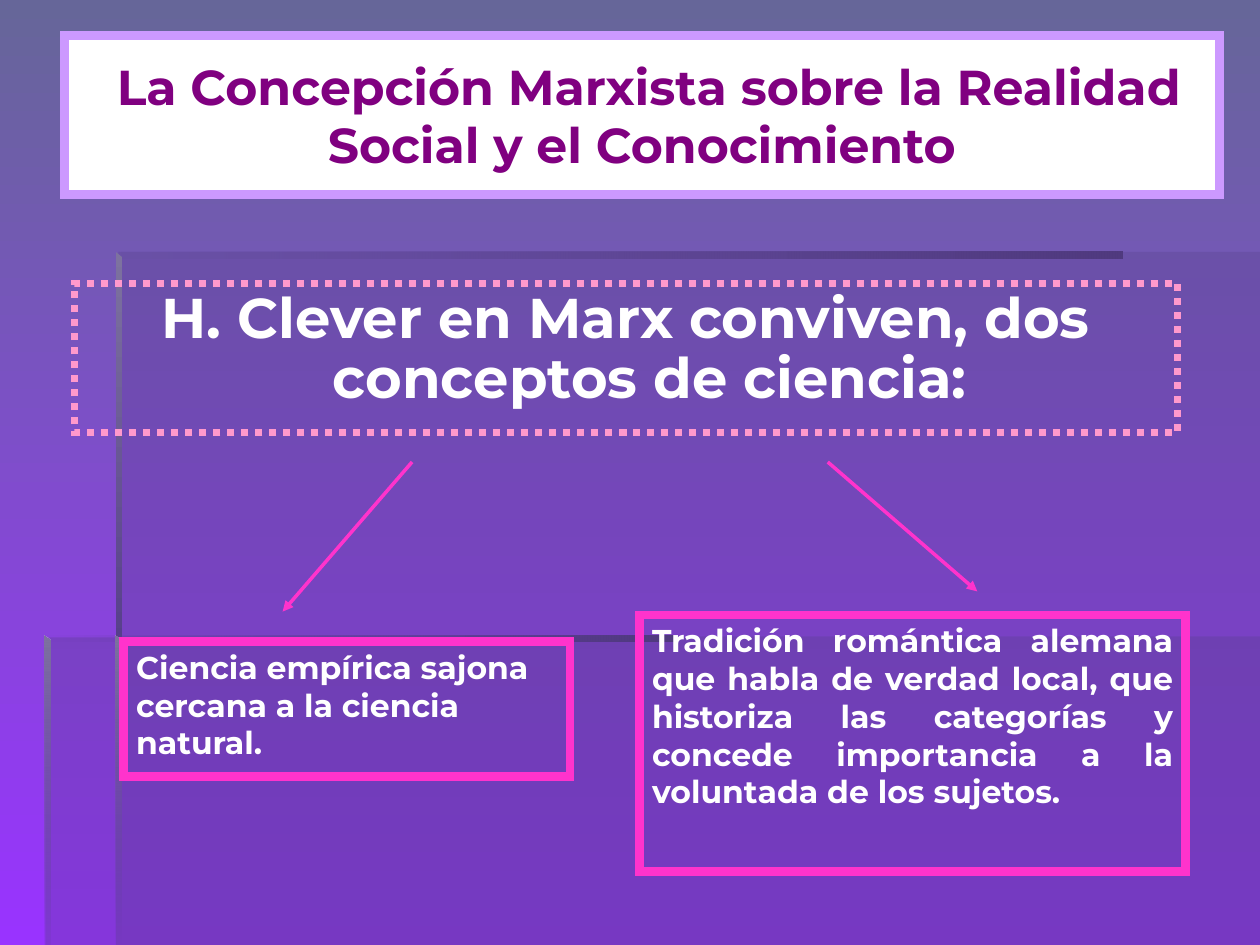
import pptx
import pptx.util
import pptx.dml.color
import pptx.enum.dml
import pptx.enum.shapes
import pptx.enum.text
import pptx.oxml
import pptx.oxml.ns
from lxml import etree

Pt = pptx.util.Pt
ALIGN = pptx.enum.text.PP_ALIGN
ANCHOR = pptx.enum.text.MSO_ANCHOR
WIDTH, HEIGHT = 720, 540
DOWN, RIGHT = 270, 0
PANEL, EDGE_LIGHT, EDGE_DARK = "573F8B", "7D729F", "503A7F"
PINK, WHITE = "FF33CC", "FFFFFF"


def color(hex_string):
    return pptx.dml.color.RGBColor.from_string(hex_string)


def add_child(parent, tag, **attributes):
    child = etree.SubElement(parent, pptx.oxml.ns.qn(tag))
    for name, value in attributes.items():
        child.set(name, str(value))
    return child


class SlideBuilder:
    """Holds the text style and the slide being built."""

    font_name = "Montserrat"

    def __init__(self, slide):
        self.slide = slide

    def gradient(self, fill, start, end, angle, opacities=(100, 100)):
        fill.gradient()
        fill.gradient_angle = angle
        for position, stop, hex_string, opacity in zip(
                (0, 1), fill.gradient_stops, (start, end), opacities):
            stop.position = position
            stop.color.rgb = color(hex_string)
        return opacities

    def set_opacity(self, shape, opacities):
        colors = shape.fill._xPr.iter(pptx.oxml.ns.qn("a:srgbClr"))
        for element, opacity in zip(list(colors), opacities):
            if opacity < 100:
                add_child(element, "a:alpha", val=opacity * 1000)

    def outline(self, points):
        (left, top), *others = points
        builder = self.slide.shapes.build_freeform(Pt(left), Pt(top), scale=1.0)
        builder.add_line_segments([(Pt(x), Pt(y)) for x, y in others], close=True)
        shape = builder.convert_to_shape()
        shape.shadow.inherit = False
        shape.line.fill.background()
        return shape

    def panel(self, points, opacity):
        shape = self.outline(points)
        shape.fill.solid()
        shape.fill.fore_color.rgb = color(PANEL)
        self.set_opacity(shape, [opacity])

    def edge(self, points, start, end, angle, opacities):
        shape = self.outline(points)
        self.gradient(shape.fill, start, end, angle)
        self.set_opacity(shape, opacities)

    def box(self, frame, text, size, line_color, line_width, text_color=WHITE,
            fill=None, align=ALIGN.LEFT, anchor=ANCHOR.TOP, dash=None):
        shape = self.slide.shapes.add_shape(
            pptx.enum.shapes.MSO_SHAPE.RECTANGLE, *map(Pt, frame))
        shape.shadow.inherit = False
        if fill:
            shape.fill.solid()
            shape.fill.fore_color.rgb = color(fill)
        else:
            shape.fill.background()
        shape.line.color.rgb = color(line_color)
        shape.line.width = Pt(line_width)
        if dash:
            shape.line.dash_style = dash
        add_child(shape.line._get_or_add_ln(), "a:miter", lim=800000)
        shape.text_frame.word_wrap = True
        shape.text_frame.vertical_anchor = anchor
        paragraph = shape.text_frame.paragraphs[0]
        paragraph.text = text
        paragraph.alignment = align
        paragraph.font.name = self.font_name
        paragraph.font.size = Pt(size)
        paragraph.font.bold = True
        paragraph.font.color.rgb = color(text_color)
        return paragraph

    def arrow(self, start, end):
        connector = self.slide.shapes.add_connector(
            pptx.enum.shapes.MSO_CONNECTOR.STRAIGHT, *map(Pt, start + end))
        connector.line.color.rgb = color(PINK)
        connector.line.width = Pt(2)
        add_child(connector.line._get_or_add_ln(), "a:tailEnd", type="triangle")
        add_child(connector._element.spPr, "a:effectLst")


def main():
    presentation = pptx.Presentation()
    presentation.slide_width, presentation.slide_height = Pt(WIDTH), Pt(HEIGHT)
    slide = presentation.slides.add_slide(presentation.slide_layouts[6])
    builder = SlideBuilder(slide)

    # Background with two overlapping translucent panels
    builder.gradient(slide.background.fill, "666699", "9933FF", DOWN)
    builder.panel([(66.2, 363.6), (66.2, HEIGHT), (WIDTH, HEIGHT), (WIDTH, 363.6)], 30)
    builder.panel([(67.7, 364.3), (26, 364.3), (26, HEIGHT), (WIDTH, HEIGHT),
                   (WIDTH, 144), (67.7, 144)], 30)

    # Bevelled panel edges: left, top, right, bottom
    for left, top, right, bottom in ((66.2, 144, 641.5, 147.6), (25.2, 363, 385.2, 366.6)):
        builder.edge([(left, top), (left, bottom), (right, bottom), (right, top)],
                     PANEL, EDGE_DARK, RIGHT, (0, 100))
    for left, top, right, bottom, end_opacity in (
            (66.2, 144, 69.8, 367.2, 100),
            (65.8, 363, 69.6, HEIGHT, 0),
            (25.2, 363, 28.8, HEIGHT, 10)):
        builder.edge([(left, top), (left, bottom), (right, bottom), (right, top + 3)],
                     EDGE_LIGHT, PANEL, DOWN, (100, end_opacity))

    # Title and main statement
    builder.box((36.75, 20.25, 660, 90.75),
                " La Concepción Marxista sobre la Realidad Social y el Conocimiento",
                28, "CC99FF", 5, text_color="800080", fill=WHITE,
                align=ALIGN.CENTER, anchor=ANCHOR.MIDDLE)
    statement = builder.box((42.5, 162, 630.5, 85),
                            "H. Clever en Marx conviven, dos conceptos de ciencia:",
                            32, "FF99CC", 4, align=ALIGN.CENTER,
                            dash=pptx.enum.dml.MSO_LINE.ROUND_DOT)
    statement.line_spacing = 0.9
    properties = statement._p.get_or_add_pPr()
    properties.set("marL", str(Pt(27)))
    properties.set("indent", str(Pt(-27)))

    # The two concepts of science
    builder.box((70.75, 366.6, 255, 77),
                "Ciencia empírica sajona cercana a la ciencia natural.", 18, PINK, 5)
    builder.box((365.5, 351.5, 312, 146.5),
                "Tradición romántica alemana que habla de verdad local, que historiza "
                "las categorías y concede importancia a la voluntada de los sujetos.",
                18, PINK, 5, align=ALIGN.JUSTIFY)

    # Arrows from the statement to each concept
    builder.arrow((235.5, 264), (161.5, 349.5))
    builder.arrow((473, 264), (558.5, 338))

    presentation.save("out.pptx")


if __name__ == "__main__":
    main()
